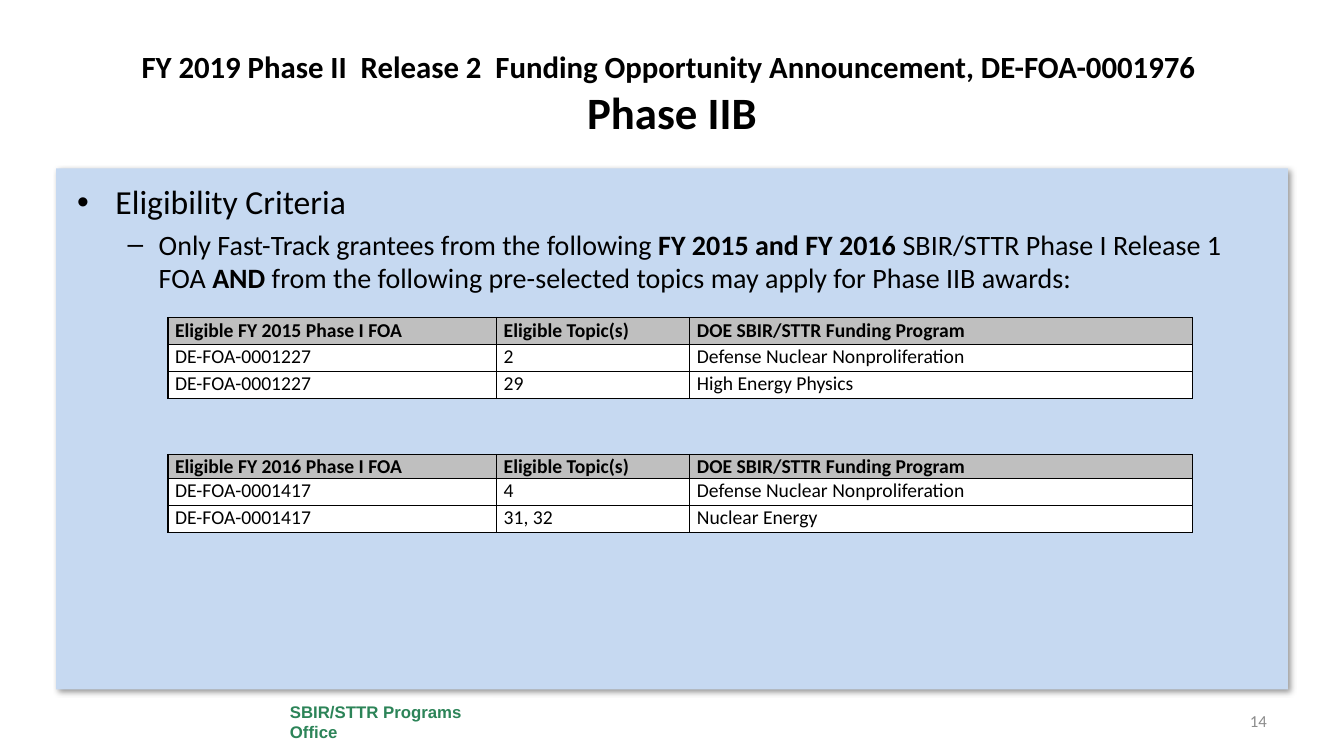
from dataclasses import dataclass

from lxml.etree import SubElement as Sub
from pptx import Presentation
from pptx.dml.color import RGBColor
from pptx.enum.shapes import MSO_SHAPE as Shape
from pptx.enum.text import MSO_ANCHOR as Anchor, PP_ALIGN as Align
from pptx.oxml.ns import qn
from pptx.util import Inches, Pt

WIDE, HIGH = 13.33, 7.5
COLS, ROWS = 24, 30
BLACK, WHITE, GRAY = "000000", "FFFFFF", "BFBFBF"


@dataclass
class Box:
    """A place on the slide, in grid columns and rows."""
    x: float
    y: float
    w: float
    h: float


@dataclass
class Grant:
    """One table of eligible topics."""
    year: int
    code: str
    top: float
    head: float
    topics: list[tuple[str, str]]


GRANTS = [
    Grant(2015, "DE-FOA-0001227", 12.6, 1.07,
          [("2", "Defense Nuclear Nonproliferation"), ("29", "High Energy Physics")]),
    Grant(2016, "DE-FOA-0001417", 18.04, 0.95,
          [("4", "Defense Nuclear Nonproliferation"), ("31, 32", "Nuclear Energy")]),
]
WIDTHS = [5.87, 3.45, 8.98]
LINE = 1.07

CRITERIA = [
    ("Only Fast-Track grantees from the following ", False),
    ("FY 2015 and FY 2016 ", True),
    ("SBIR/STTR Phase I Release 1 FOA ", False),
    ("AND", True),
    (" from the following pre-selected topics may apply for Phase IIB awards:", False),
]


def col(n: float) -> int:
    return Inches(n * WIDE / COLS)


def row(n: float) -> int:
    return Inches(n * HIGH / ROWS)


def rgb(code: str) -> RGBColor:
    return RGBColor.from_string(code)


def area(box: Box) -> tuple[int, int, int, int]:
    return col(box.x), row(box.y), col(box.w), row(box.h)


def style(run, size: float, color: str = BLACK, bold: bool = False,
          face: str = "Calibri") -> None:
    font = run.font
    font.name, font.size, font.bold = face, Pt(size), bold
    font.color.rgb = rgb(color)


def panel(slide, box: Box, fill: str):
    shape = slide.shapes.add_shape(Shape.RECTANGLE, *area(box))
    shape.shadow.inherit = False
    shape.fill.solid()
    shape.fill.fore_color.rgb = rgb(fill)
    shape.line.fill.background()
    return shape


def shade(shape) -> None:
    """Give a shape a soft shadow to the lower right."""
    list_ = shape._element.spPr.find(qn("a:effectLst"))
    drop = Sub(list_, qn("a:outerShdw"), blurRad=str(Pt(4)), dist=str(Pt(3)),
               dir="2700000", algn="tl", rotWithShape="0")
    tint = Sub(drop, qn("a:srgbClr"), val=BLACK)
    Sub(tint, qn("a:alpha"), val="40000")


def bullet(para, mark: str, left: float, hang: float) -> None:
    props = para._p.get_or_add_pPr()
    props.set("marL", str(Inches(left)))
    props.set("indent", str(-Inches(hang)))
    Sub(props, qn("a:buFont"), typeface="Arial")
    Sub(props, qn("a:buChar"), char=mark)


def border(cell) -> None:
    props = cell._tc.get_or_add_tcPr()
    for side in ("lnL", "lnR", "lnT", "lnB"):
        edge = Sub(props, qn(f"a:{side}"), w=str(Pt(1)))
        Sub(Sub(edge, qn("a:solidFill")), qn("a:srgbClr"), val=BLACK)


def table(slide, grant: Grant) -> None:
    lines = [(f"Eligible FY {grant.year} Phase I FOA", "Eligible Topic(s)",
              "DOE SBIR/STTR Funding Program")]
    lines += [(grant.code, *topic) for topic in grant.topics]
    highs = [grant.head] + [LINE] * len(grant.topics)
    box = Box(3, grant.top, sum(WIDTHS), sum(highs))
    grid = slide.shapes.add_table(len(lines), len(WIDTHS), *area(box)).table
    for part, wide in zip(grid.columns, WIDTHS):
        part.width = col(wide)
    for i, (line, high) in enumerate(zip(lines, highs)):
        grid.rows[i].height = row(high)
        for j, text in enumerate(line):
            cell, head = grid.cell(i, j), i == 0
            border(cell)
            cell.fill.solid()
            cell.fill.fore_color.rgb = rgb(GRAY if head else WHITE)
            cell.margin_left = cell.margin_right = Inches(0.07)
            cell.margin_top = cell.margin_bottom = 0
            cell.vertical_anchor = Anchor.MIDDLE if head else Anchor.TOP
            cell.text_frame.text = text
            style(cell.text_frame.paragraphs[0].runs[0], 14, bold=head)


def title(slide) -> None:
    head = slide.shapes.title
    head.left, head.top, head.width, head.height = area(Box(1.2, 1.2, 21.6, 5))
    frame = head.text_frame
    frame.vertical_anchor = Anchor.MIDDLE
    frame.text = ("FY 2019 Phase II  Release 2  Funding Opportunity Announcement, "
                  "DE-FOA-0001976 \vPhase IIB")
    para = frame.paragraphs[0]
    para.alignment = Align.CENTER
    for run, size in zip(para.runs, (22, 32)):
        style(run, size, bold=True)
    Sub(para._p.find(qn("a:br")), qn("a:rPr"), sz="2200")


def body(slide) -> None:
    frame = slide.shapes.add_textbox(*area(Box(1.2, 7, 21.6, 19.8))).text_frame
    frame.word_wrap = True
    frame.text = "Eligibility Criteria"
    first = frame.paragraphs[0]
    bullet(first, "•", 0.38, 0.38)
    style(first.runs[0], 24)
    rule = frame.add_paragraph()
    rule.level = 1
    rule.space_before = Pt(4)
    bullet(rule, "–", 0.81, 0.31)
    for text, bold in CRITERIA:
        run = rule.add_run()
        run.text = text
        style(run, 20, bold=bold)


def footer(slide) -> None:
    office = panel(slide, Box(5, 27.68, 3.8, 1.92), WHITE).text_frame
    office.word_wrap = True
    office.text = "SBIR/STTR Programs Office"
    office.paragraphs[0].alignment = Align.LEFT
    style(office.paragraphs[0].runs[0], 12, "2C8458", True, "Arial")
    page = slide.shapes.add_textbox(*area(Box(19, 27.8, 3.8, 1.6))).text_frame
    page.word_wrap = True
    page.text = "14"
    page.paragraphs[0].alignment = Align.RIGHT
    style(page.paragraphs[0].runs[0], 12, "8C8C8C")
    office.vertical_anchor = page.vertical_anchor = Anchor.MIDDLE


def main() -> None:
    deck = Presentation()
    deck.slide_width, deck.slide_height = Inches(WIDE), Inches(HIGH)
    slide = deck.slides.add_slide(deck.slide_layouts[5])
    # Backdrop and heading
    shade(panel(slide, Box(1, 6.68, 22, 20.68), "C6D9F1"))
    title(slide)
    # Criteria and tables
    body(slide)
    for grant in GRANTS:
        table(slide, grant)
    # Office name and page number
    footer(slide)
    deck.save("out.pptx")


if __name__ == "__main__":
    main()
